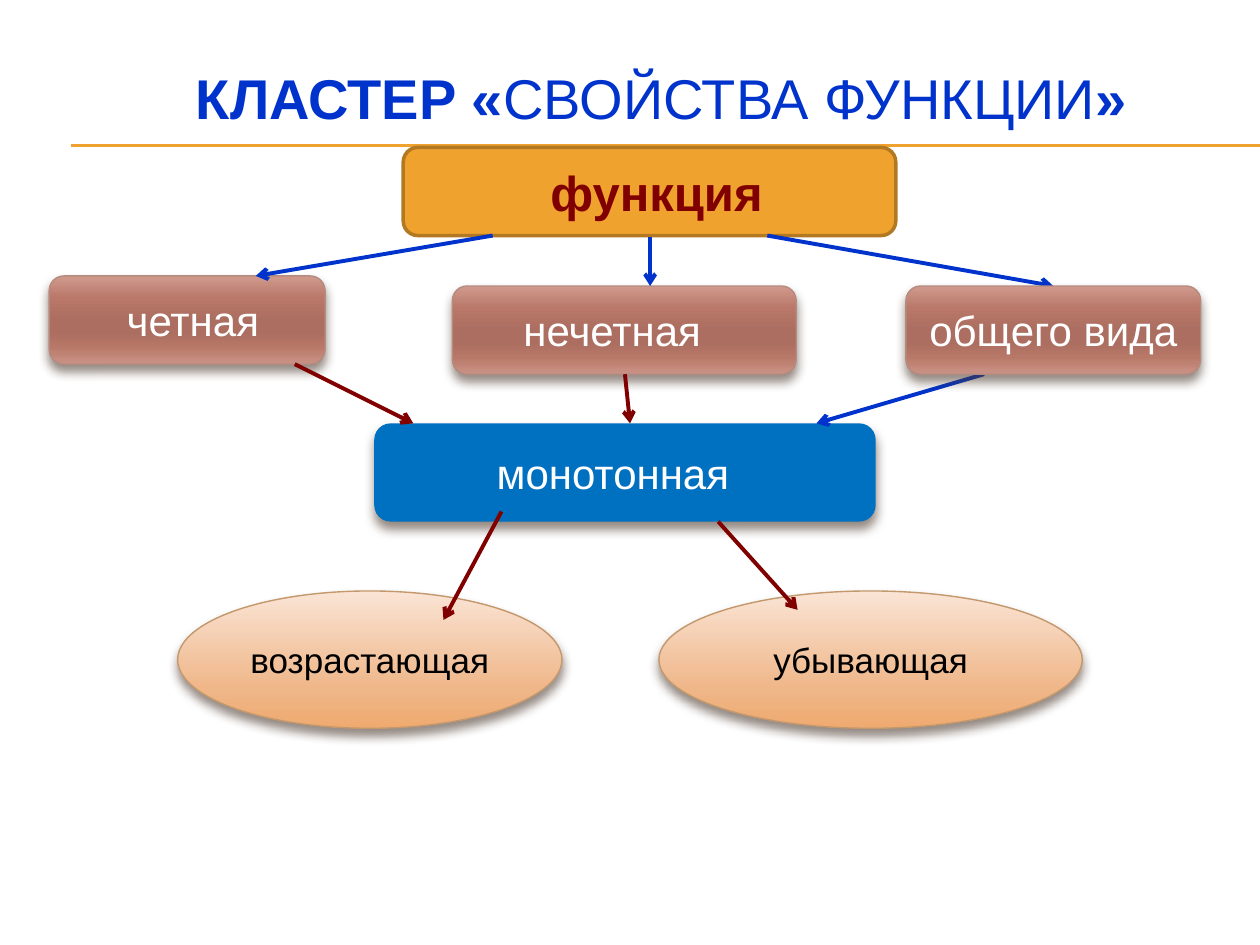
from lxml.etree import SubElement
from pptx import Presentation
from pptx.dml.color import RGBColor
from pptx.enum.shapes import MSO_CONNECTOR as Connector, MSO_SHAPE as Shape
from pptx.enum.text import MSO_ANCHOR as Anchor, PP_ALIGN as Align
from pptx.oxml.ns import qn
from pptx.util import Inches, Pt

COLORS = {
    "blue": "0033CC", "maroon": "800000", "gold": "F0A22E",
    "gold_edge": "B27822", "azure": "0070C0", "brown_edge": "B58B80",
    "peach_edge": "C3986D", "shadow": "4E3B30",
    "white": "FFFFFF", "black": "000000",
}
BROWN = [(0, "D09A8D"), (25, "B97869"), (50, "AB6E60"),
         (65, "AB6E60"), (80, "B87868"), (100, "CA9386")]
PEACH = [(0, "FAE4D5"), (72, "EFB688"), (100, "EFAA6F")]

ROOT = {"shape": Shape.FLOWCHART_ALTERNATE_PROCESS, "fill": "gold",
        "edge": ("gold_edge", 2), "shadow": False,
        "font": {"size": Pt(28), "bold": True}, "ink": "maroon"}
PARITY = {"shape": Shape.FLOWCHART_ALTERNATE_PROCESS, "fill": BROWN,
          "edge": ("brown_edge", 0.79), "shadow": True,
          "font": {"size": Pt(24)}, "ink": "white"}
MONOTONE = PARITY | {"fill": "azure", "edge": None}
TREND = {"shape": Shape.OVAL, "fill": PEACH,
         "edge": ("peach_edge", 0.79), "shadow": True,
         "font": {"size": Pt(20)}, "ink": "black"}

# wording, (left, top, width, height), style, extra left and right inset
NODES = [
    ("функция", (3.2, 1.17, 3.91, 0.7), ROOT, (0.11, 0)),
    ("монотонная", (2.97, 3.36, 3.98, 0.78), MONOTONE, (0, 0.19)),
    ("нечетная", (3.59, 2.27, 2.73, 0.7), PARITY, (0, 0.19)),
    ("четная", (0.39, 2.19, 2.19, 0.7), PARITY, (0.09, 0)),
    ("убывающая", (5.23, 4.69, 3.36, 1.09), TREND, (0, 0)),
    ("возрастающая", (1.41, 4.69, 3.05, 1.09), TREND, (0, 0)),
]
GENERAL_NODE = ("общего вида", (7.19, 2.27, 2.34, 0.7), PARITY, (0, 0))
ARROWS = [
    ("blue", (5.16, 1.88), (5.16, 2.27)),
    ("blue", (7.81, 2.97), (6.48, 3.36)),
    ("blue", (6.09, 1.87), (8.36, 2.27)),
    ("blue", (3.91, 1.87), (2.03, 2.19)),
    ("maroon", (4.96, 2.97), (5, 3.36)),
    ("maroon", (2.34, 2.89), (3.28, 3.36)),
    ("maroon", (3.98, 4.06), (3.52, 4.92)),
    ("maroon", (5.7, 4.14), (6.33, 4.84)),
]


def rgb(name):
    return RGBColor.from_string(COLORS[name])


def set_attributes(target, values):
    for name, value in values.items():
        setattr(target, name, value)


def add_run(paragraph, wording, ink, font):
    run = paragraph.add_run()
    run.text = wording
    set_attributes(run.font, {"name": "Arial"} | font)
    run.font.color.rgb = rgb(ink)


def fill_gradient(node, stops):
    """Fill from top to bottom with (percent, colour) stops."""
    node.fill.gradient()
    node.fill.gradient_angle = 270
    stop_list = node.element.spPr.find(qn("a:gradFill")).find(qn("a:gsLst"))
    for old_stop in list(stop_list):
        stop_list.remove(old_stop)
    for percent, color in stops:
        stop = SubElement(stop_list, qn("a:gs"), pos=str(percent * 1000))
        SubElement(stop, qn("a:srgbClr"), val=color)


def add_drop_shadow(node):
    effects = node.element.spPr.find(qn("a:effectLst"))
    shadow = SubElement(effects, qn("a:outerShdw"), blurRad=str(Pt(6)),
                        dist=str(Pt(4)), dir="5400000", rotWithShape="0")
    color = SubElement(shadow, qn("a:srgbClr"), val=COLORS["shadow"])
    SubElement(color, qn("a:alpha"), val="60000")


def add_node(slide, wording, box, style, extra_inset):
    node = slide.shapes.add_shape(style["shape"], *map(Inches, box))
    node.shadow.inherit = False
    if isinstance(style["fill"], str):
        node.fill.solid()
        node.fill.fore_color.rgb = rgb(style["fill"])
    else:
        fill_gradient(node, style["fill"])
    if style["edge"]:
        edge_color, edge_width = style["edge"]
        node.line.color.rgb = rgb(edge_color)
        node.line.width = Pt(edge_width)
    else:
        node.line.fill.background()
    if style["shadow"]:
        add_drop_shadow(node)
    left, right = extra_inset
    set_attributes(node.text_frame, {
        "word_wrap": True, "vertical_anchor": Anchor.MIDDLE,
        "margin_left": Inches(0.1 + left), "margin_right": Inches(0.1 + right)})
    label = node.text_frame.paragraphs[0]
    label.alignment = Align.CENTER
    add_run(label, wording, style["ink"], style["font"])


def add_line(slide, color, start, end, width):
    line = slide.shapes.add_connector(
        Connector.STRAIGHT, *map(Inches, start + end))
    line.line.color.rgb = rgb(color)
    line.line.width = Pt(width)
    SubElement(line.element.spPr, qn("a:effectLst"))
    return line


def add_arrow(slide, color, start, end):
    arrow = add_line(slide, color, start, end, 2.25)
    SubElement(arrow.line._get_or_add_ln(), qn("a:tailEnd"), type="arrow")


def add_title(slide):
    title = slide.shapes.add_textbox(*map(Inches, (0.5, 0.31, 9.5, 0.92)))
    set_attributes(title.text_frame, {
        "word_wrap": True, "vertical_anchor": Anchor.MIDDLE})
    heading = title.text_frame.paragraphs[0]
    heading.alignment = Align.CENTER
    for wording, bold in (("КЛАСТЕР «", True), ("СВОЙСТВА ФУНКЦИИ", False),
                          ("»", True)):
        add_run(heading, wording, "blue", {"size": Pt(32), "bold": bold})


def main():
    deck = Presentation()
    set_attributes(deck, {"slide_width": Inches(10),
                          "slide_height": Inches(7.5)})
    slide = deck.slides.add_slide(deck.slide_layouts[6])
    for y in (1.15, 1.16):
        add_line(slide, "gold", (0.56, y), (10, y), 0.75)
    add_title(slide)
    for node in NODES:
        add_node(slide, *node)
    for arrow in ARROWS:
        add_arrow(slide, *arrow)
    add_node(slide, *GENERAL_NODE)
    deck.save("out.pptx")


if __name__ == "__main__":
    main()
